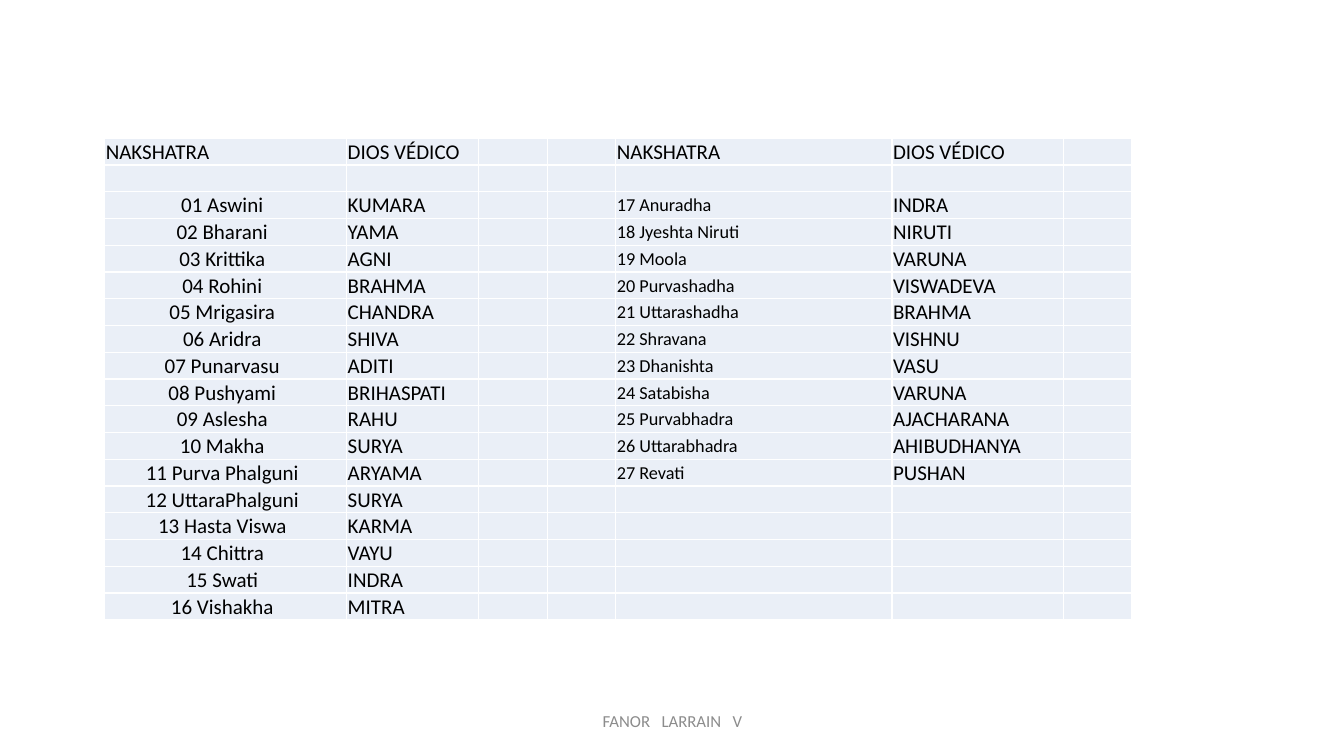
from itertools import zip_longest

from lxml import etree
from pptx import Presentation
from pptx import util as u
from pptx.dml import color
from pptx.enum import text
from pptx.oxml import ns

COLORS = {"text": "000000", "footer": "8C8C8C", "cell": "EAEFF7", "border": "FFFFFF"}
HEADERS = {0: "NAKSHATRA", 1: "DIOS VÉDICO", 4: "NAKSHATRA", 5: "DIOS VÉDICO"}
COLUMN_SHARES = [18, 9.83, 5.1, 5.1, 20.55, 12.75, 5.1]
FIRST_HALF = [
    ("01 Aswini", "KUMARA"),
    ("02 Bharani", "YAMA"),
    ("03 Krittika", "AGNI"),
    ("04 Rohini", "BRAHMA"),
    ("05 Mrigasira", "CHANDRA"),
    ("06 Aridra", "SHIVA"),
    ("07 Punarvasu", "ADITI"),
    ("08 Pushyami", "BRIHASPATI"),
    ("09 Aslesha", "RAHU"),
    ("10 Makha", "SURYA"),
    ("11 Purva Phalguni", "ARYAMA"),
    ("12 UttaraPhalguni", "SURYA"),
    ("13 Hasta Viswa", "KARMA"),
    ("14 Chittra", "VAYU"),
    ("15 Swati", "INDRA"),
    ("16 Vishakha", "MITRA"),
]
SECOND_HALF = [
    ("17 Anuradha", "INDRA"),
    ("18 Jyeshta Niruti", "NIRUTI"),
    ("19 Moola", "VARUNA"),
    ("20 Purvashadha", "VISWADEVA"),
    ("21 Uttarashadha", "BRAHMA"),
    ("22 Shravana", "VISHNU"),
    ("23 Dhanishta", "VASU"),
    ("24 Satabisha", "VARUNA"),
    ("25 Purvabhadra", "AJACHARANA"),
    ("26 Uttarabhadra", "AHIBUDHANYA"),
    ("27 Revati", "PUSHAN"),
]


def write(frame, content, size=15, tint="text", align=text.PP_ALIGN.LEFT, font="Calibri"):
    paragraph = frame.paragraphs[0]
    paragraph.alignment = align
    if not content:
        ending = etree.SubElement(paragraph._p, ns.qn("a:endParaRPr"))
        ending.set("sz", str(size * 100))
        return
    run = paragraph.add_run()
    run.text = content
    run.font.name = font
    run.font.size = u.Pt(size)
    run.font.color.rgb = color.RGBColor.from_string(COLORS[tint])


class SlideBuilder:
    """Places styled elements on a slide, with lengths in percent of its size."""

    def __init__(self, presentation):
        self.width = presentation.slide_width
        self.height = presentation.slide_height
        self.slide = presentation.slides.add_slide(presentation.slide_layouts[6])

    def across(self, share):
        return round(self.width * share / 100)

    def down(self, share):
        return round(self.height * share / 100)

    def box(self, left, top, width, height):
        return self.across(left), self.down(top), self.across(width), self.down(height)

    def label(self, content, area, **style):
        frame = self.slide.shapes.add_textbox(*self.box(*area)).text_frame
        frame.word_wrap = True
        frame.vertical_anchor = text.MSO_ANCHOR.MIDDLE
        write(frame, content, **style)

    def table(self, rows, shares, left, top, height):
        area = self.box(left, top, sum(shares), height)
        table = self.slide.shapes.add_table(len(rows), len(shares), *area).table
        table.first_row = table.horz_banding = False
        for column, share in zip(table.columns, shares):
            column.width = self.across(share)
        for row, contents in zip(table.rows, rows):
            row.height = self.down(height / len(rows))
            for cell, (content, style) in zip(row.cells, contents):
                self.cell(cell, content, **style)

    def cell(self, cell, content, anchor=text.MSO_ANCHOR.BOTTOM, right=0.01, **style):
        cell.margin_left = cell.margin_top = u.Inches(0.01)
        cell.margin_right = u.Inches(right)
        cell.margin_bottom = 0
        cell.vertical_anchor = anchor
        for side in ("lnL", "lnR", "lnT", "lnB"):
            line = etree.SubElement(cell._tc.get_or_add_tcPr(), ns.qn(f"a:{side}"), w=str(u.Pt(1)))
            fill = etree.SubElement(line, ns.qn("a:solidFill"))
            etree.SubElement(fill, ns.qn("a:srgbClr"), val=COLORS["border"])
        cell.fill.solid()
        cell.fill.fore_color.rgb = color.RGBColor.from_string(COLORS["cell"])
        write(cell.text_frame, content, **style)


def nakshatra_rows():
    middle = text.MSO_ANCHOR.MIDDLE
    styles = {
        0: {"anchor": middle, "align": text.PP_ALIGN.CENTER, "right": 0.08},
        4: {"anchor": middle, "size": 13},
    }
    columns = range(len(COLUMN_SHARES))
    rows = [[(HEADERS.get(column, ""), {}) for column in columns], [("", {}) for column in columns]]
    for first, second in zip_longest(FIRST_HALF, SECOND_HALF, fillvalue=("", "")):
        contents = [*first, "", "", *second, ""]
        rows.append([(content, styles.get(column, {})) for column, content in enumerate(contents)])
    return rows


def main():
    presentation = Presentation()
    presentation.slide_width = u.Inches(13.33)
    presentation.slide_height = u.Inches(7.5)
    builder = SlideBuilder(presentation)
    builder.table(nakshatra_rows(), COLUMN_SHARES, left=7.8, top=18.3, height=63.47)
    builder.label("FANOR   LARRAIN   V", (33.16, 92.67, 33.76, 5.33),
                  size=12, tint="footer", align=text.PP_ALIGN.CENTER)
    presentation.save("out.pptx")


if __name__ == "__main__":
    main()
